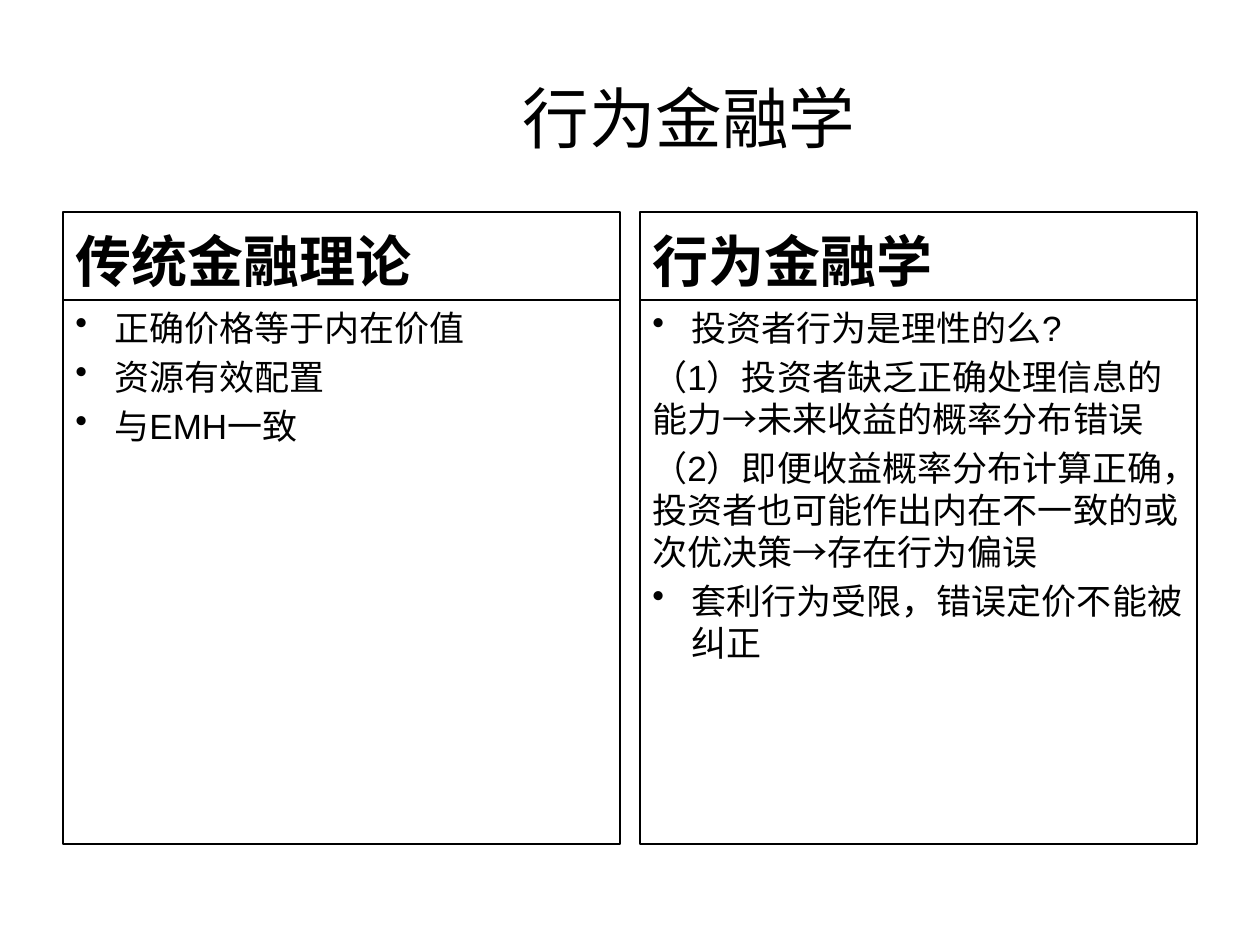
"""Build a slide that sets traditional finance theory beside behavioural finance."""
from lxml import etree
from pptx import Presentation, util as u
from pptx.dml.color import RGBColor
from pptx.enum import shapes, text
from pptx.oxml.ns import qn

BLACK = RGBColor(0, 0, 0)
LEFT, PANEL_WIDTH, GAP = 63, 557, 20
HEADING_TOP, HEADING_HEIGHT, POINTS_HEIGHT = 212, 88, 544
INDENT = 39
COLUMNS = [
    ("传统金融理论", [
        ("正确价格等于内在价值", True),
        ("资源有效配置", True),
        ("与EMH一致", True),
    ]),
    ("行为金融学", [
        ("投资者行为是理性的么?", True),
        ("（1）投资者缺乏正确处理信息的能力→未来收益的概率分布错误", False),
        ("（2）即便收益概率分布计算正确，投资者也可能作出内在不一致的或次优决策→存在行为偏误", False),
        ("套利行为受限，错误定价不能被纠正", True),
    ]),
]


def px(count):
    return u.Inches(count / 126)


def write(frame, lines, size, anchor, align=text.PP_ALIGN.LEFT, bold=False):
    frame.word_wrap = True
    frame.vertical_anchor = anchor
    for index, (line, bulleted) in enumerate(lines):
        paragraph = frame.add_paragraph() if index else frame.paragraphs[0]
        paragraph.text = line
        paragraph.alignment = align
        if index:
            paragraph.space_before = u.Pt(size * 0.2)
        if bulleted:
            properties = paragraph._p.get_or_add_pPr()
            properties.set("marL", str(px(INDENT)))
            properties.set("indent", str(-px(INDENT)))
            etree.SubElement(properties, qn("a:buChar")).set("char", "•")
        paragraph.font.name = "Arial"
        paragraph.font.size = u.Pt(size)
        paragraph.font.bold = bold
        paragraph.font.color.rgb = BLACK


deck = Presentation()
deck.slide_width, deck.slide_height = px(1260), px(945)
slide = deck.slides.add_slide(deck.slide_layouts[6])

title = slide.shapes.add_textbox(px(LEFT), px(38), px(1134), px(158)).text_frame
title.margin_left = px(131)
write(title, [("行为金融学", False)], 38, text.MSO_ANCHOR.MIDDLE, text.PP_ALIGN.CENTER)

for column, (heading, points) in enumerate(COLUMNS):
    left = LEFT + column * (PANEL_WIDTH + GAP)
    for top, height, lines, size, anchor, bold in (
        (HEADING_TOP, HEADING_HEIGHT, [(heading, False)], 32, text.MSO_ANCHOR.BOTTOM, True),
        (HEADING_TOP + HEADING_HEIGHT, POINTS_HEIGHT, points, 20, text.MSO_ANCHOR.TOP, False),
    ):
        panel = slide.shapes.add_shape(
            shapes.MSO_SHAPE.RECTANGLE, px(left), px(top), px(PANEL_WIDTH), px(height))
        panel.shadow.inherit = False
        panel.fill.background()
        panel.line.color.rgb = BLACK
        panel.line.width = u.Pt(0.75)
        write(panel.text_frame, lines, size, anchor, bold=bold)

deck.save("out.pptx")
